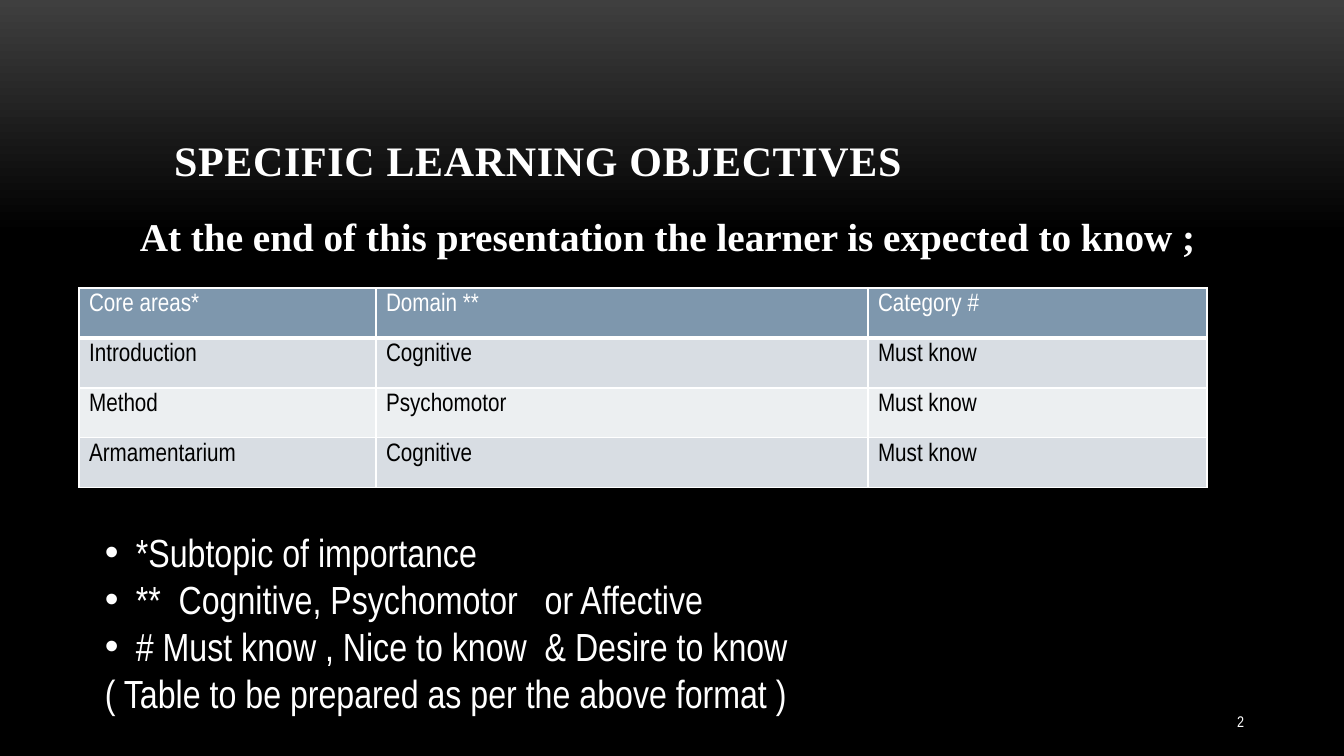
import pptx
import pptx.util
import pptx.dml.color
import pptx.enum.text
import pptx.oxml.ns
import lxml.etree

RGBColor = pptx.dml.color.RGBColor
PP_ALIGN = pptx.enum.text.PP_ALIGN
ANCHOR = pptx.enum.text.MSO_ANCHOR
AUTO_SIZE = pptx.enum.text.MSO_AUTO_SIZE

# Content
HEADING = "SPECIFIC LEARNING OBJECTIVES"
LEAD = "At the end of this presentation the learner is expected to know ;"
OBJECTIVES = [
    ("Core areas*", "Domain **", "Category #"),
    ("Introduction", "Cognitive", "Must know"),
    ("Method", "Psychomotor", "Must know"),
    ("Armamentarium", "Cognitive", "Must know"),
]
NOTES = [  # text, bulleted
    ("*Subtopic of importance", True),
    ("**  Cognitive, Psychomotor   or Affective", True),
    ("# Must know , Nice to know  & Desire to know", True),
    ("( Table to be prepared as per the above format )", False),
]
PAGE_NUMBER = "2"

# Places in px: left, top, width, height
HEADING_BOX = (164, 68, 1021, 122)
LEAD_BOX = (130, 207, 1080, 57)
NOTES_BOX = (95, 523, 913, 201)
NUMBER_BOX = (1109, 701, 145, 40)
TABLE_LEFT, TABLE_TOP, ROW_HEIGHT = 79, 288, 50
COLUMN_WIDTHS = (297, 492, 339)
BULLET_INDENT = 31

# Look
SERIF, NARROW = "Times New Roman", "Arial Narrow"
WHITE = RGBColor(0xFF, 0xFF, 0xFF)
BLACK = RGBColor(0x00, 0x00, 0x00)
CHARCOAL = RGBColor(0x3F, 0x3F, 0x3F)
HEADER_BLUE = RGBColor(0x7E, 0x97, 0xAD)
BANDS = (RGBColor(0xD8, 0xDD, 0xE3), RGBColor(0xEC, 0xEF, 0xF1))


def px(length):
    return pptx.util.Emu(round(length * 914400 / 100.8))


def write(paragraph, text, size, font, color=WHITE, bold=False):
    run = paragraph.add_run()
    run.text = text
    run.font.size = pptx.util.Pt(size)
    run.font.name = font
    run.font.color.rgb = color
    run.font.bold = bold
    return run


def add_text_box(box):
    frame = slide.shapes.add_textbox(*map(px, box)).text_frame
    frame.word_wrap = True
    return frame


def add_child(parent, tag, **attributes):
    return lxml.etree.SubElement(parent, pptx.oxml.ns.qn(tag), **attributes)


def set_borders(cell, bottom_width):
    properties = cell._tc.get_or_add_tcPr()
    widths = {"a:lnL": 1, "a:lnR": 1, "a:lnT": 1, "a:lnB": bottom_width}
    for tag, width in widths.items():
        line = add_child(properties, tag, w=str(pptx.util.Pt(width)))
        add_child(add_child(line, "a:solidFill"), "a:srgbClr", val=str(WHITE))


prs = pptx.Presentation()
prs.slide_width, prs.slide_height = px(1344), px(756)
slide = prs.slides.add_slide(prs.slide_layouts[5])

# Background
backdrop = slide.background.fill
backdrop.gradient()
backdrop.gradient_angle = 270
for stop, position, color in zip(backdrop.gradient_stops, (0, 0.31), (CHARCOAL, BLACK)):
    stop.position = position
    stop.color.rgb = color

# Heading
heading = slide.shapes.title
heading.left, heading.top, heading.width, heading.height = map(px, HEADING_BOX)
heading.text_frame.auto_size = AUTO_SIZE.NONE
heading.text_frame.vertical_anchor = ANCHOR.BOTTOM
heading_line = heading.text_frame.paragraphs[0]
heading_line.alignment = PP_ALIGN.LEFT
heading_run = write(heading_line, HEADING, 30, SERIF, bold=True)
heading_run.font._element.set("spc", "50")

# Objectives table
objectives = slide.shapes.add_table(
    len(OBJECTIVES), len(COLUMN_WIDTHS), px(TABLE_LEFT), px(TABLE_TOP),
    px(sum(COLUMN_WIDTHS)), px(ROW_HEIGHT * len(OBJECTIVES))).table
for column, width in zip(objectives.columns, COLUMN_WIDTHS):
    column.width = px(width)
for r, row in enumerate(OBJECTIVES):
    objectives.rows[r].height = px(ROW_HEIGHT)
    is_header = r == 0
    for c, text in enumerate(row):
        cell = objectives.cell(r, c)
        set_borders(cell, 3 if is_header else 1)
        cell.fill.solid()
        cell.fill.fore_color.rgb = HEADER_BLUE if is_header else BANDS[(r - 1) % 2]
        write(cell.text_frame.paragraphs[0], text, 18, NARROW,
              WHITE if is_header else BLACK)

# Notes below the table
notes = add_text_box(NOTES_BOX)
notes.auto_size = AUTO_SIZE.SHAPE_TO_FIT_TEXT
for i, (text, bulleted) in enumerate(NOTES):
    note = notes.add_paragraph() if i else notes.paragraphs[0]
    if bulleted:
        properties = note._p.get_or_add_pPr()
        properties.set("marL", str(px(BULLET_INDENT)))
        properties.set("indent", str(-px(BULLET_INDENT)))
        add_child(properties, "a:buFont", typeface="Arial")
        add_child(properties, "a:buChar", char="•")
    write(note, text, 28, NARROW)

# Lead-in above the table
lead = add_text_box(LEAD_BOX)
lead.auto_size = AUTO_SIZE.SHAPE_TO_FIT_TEXT
write(lead.paragraphs[0], LEAD, 28, SERIF, bold=True)

# Page number
number = add_text_box(NUMBER_BOX)
number.vertical_anchor = ANCHOR.MIDDLE
number.paragraphs[0].alignment = PP_ALIGN.RIGHT
write(number.paragraphs[0], PAGE_NUMBER, 11, NARROW)

prs.save("out.pptx")
